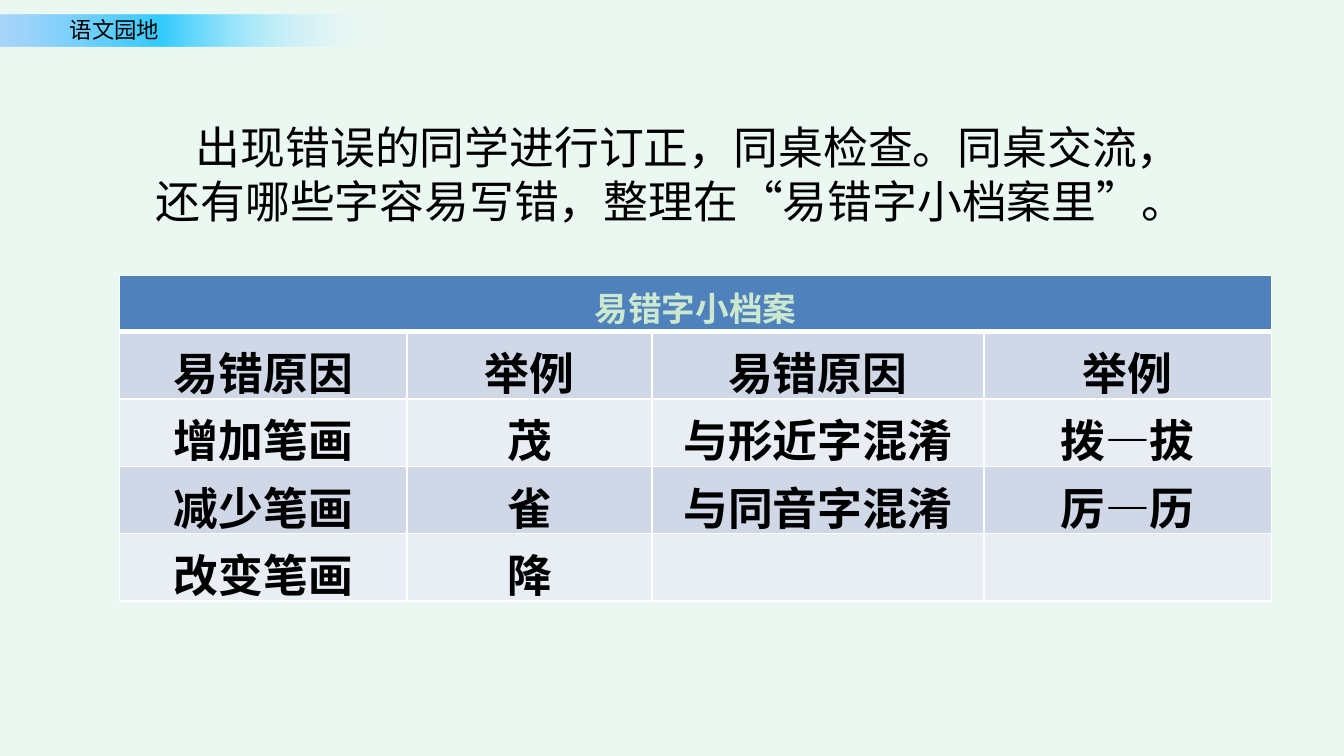
from lxml.etree import SubElement
from pptx import Presentation
from pptx.dml.color import RGBColor
from pptx.enum.shapes import MSO_SHAPE
from pptx.enum.text import PP_ALIGN
from pptx.oxml.ns import qn
from pptx.util import Inches, Pt

COLORS = {
    "page": "EBF7F1", "ink": "000000", "pale": "CCE8CF", "header": "4F81BD",
    "band_dark": "D0D8E8", "band_light": "E9EDF4", "border": "FFFFFF",
}
BAR_STOPS = [(0, "99CCFF", 76), (40, "33CCFF", 100), (97, "FFFFFF", 0)]
CJK = "Noto Sans CJK SC"

TABLE_TITLE = "易错字小档案"
ROWS = [
    ["易错原因", "举例", "易错原因", "举例"],
    ["增加笔画", "茂", "与形近字混淆", "拨—拔"],
    ["减少笔画", "雀", "与同音字混淆", "厉—历"],
    ["改变笔画", "降", "", ""],
]
COL_WIDTHS = [2.14, 1.82, 2.47, 2.14]
TITLE_HEIGHT, ROW_HEIGHT = 0.42, 0.5


def rgb(name):
    return RGBColor.from_string(COLORS[name])


def set_attrs(obj, values):
    for name, value in values.items():
        setattr(obj, name, value)


def write(p, text, size, color="ink", font=CJK, bold=False):
    r = p.add_run()
    r.text = text
    set_attrs(r.font, {"size": Pt(size), "bold": bold, "name": font})
    r.font.color.rgb = rgb(color)
    SubElement(r._r.get_or_add_rPr(), qn("a:ea"), typeface=CJK)


def add_text(slide, box, text, size, wrap=True, indent=0):
    tf = slide.shapes.add_textbox(*map(Inches, box)).text_frame
    tf.word_wrap = wrap
    p = tf.paragraphs[0]
    p._p.get_or_add_pPr().set("indent", str(Inches(indent)))
    write(p, text, size)


def add_section_bar(slide, left, top, width, height):
    """Fading gradient strip with the section name on it."""
    sp = slide.shapes.add_shape(
        MSO_SHAPE.RECTANGLE, *map(Inches, (left, top, width, height)))
    sp.shadow.inherit = False
    sp.line.fill.background()
    sp.fill.gradient()
    sp.fill.gradient_angle = 0
    stops = sp._element.spPr.find(f".//{qn('a:gsLst')}")
    for stop in list(stops):
        stops.remove(stop)
    for pos, color, alpha in BAR_STOPS:
        gs = SubElement(stops, qn("a:gs"), pos=str(pos * 1000))
        clr = SubElement(gs, qn("a:srgbClr"), val=color)
        SubElement(clr, qn("a:alpha"), val=str(alpha * 1000))
    add_text(slide, (left + 0.43, top - 0.04, 0.88, 0.3), "语文园地", 12, wrap=False)


def style_cell(cell, fill, top_width=1, bottom_width=1):
    tcPr = cell._tc.get_or_add_tcPr()
    for side, width in {"L": 1, "R": 1, "T": top_width, "B": bottom_width}.items():
        ln = SubElement(tcPr, qn(f"a:ln{side}"), w=str(Pt(width)))
        line_fill = SubElement(ln, qn("a:solidFill"))
        SubElement(line_fill, qn("a:srgbClr"), val=COLORS["border"])
    cell.fill.solid()
    cell.fill.fore_color.rgb = rgb(fill)


def fill_cell(cell, text, **fmt):
    p = cell.text_frame.paragraphs[0]
    p.alignment = PP_ALIGN.CENTER
    if text:
        write(p, text, bold=True, **fmt)


def add_error_table(slide, left, top):
    height = TITLE_HEIGHT + ROW_HEIGHT * len(ROWS)
    table = slide.shapes.add_table(
        len(ROWS) + 1, len(COL_WIDTHS),
        *map(Inches, (left, top, sum(COL_WIDTHS), height))).table
    set_attrs(table, {"first_row": False, "horz_banding": False})
    for column, width in zip(table.columns, COL_WIDTHS):
        column.width = Inches(width)
    for i, row in enumerate(table.rows):
        row.height = Inches(ROW_HEIGHT if i else TITLE_HEIGHT)

    for cell in table.rows[0].cells:
        style_cell(cell, "header", bottom_width=3)
    title = table.cell(0, 0)
    title.merge(table.cell(0, len(COL_WIDTHS) - 1))
    fill_cell(title, TABLE_TITLE, size=18, color="pale")

    for i, texts in enumerate(ROWS, start=1):
        for j, text in enumerate(texts):
            cell = table.cell(i, j)
            style_cell(cell, "band_dark" if i % 2 else "band_light",
                       top_width=3 if i == 1 else 1)
            fill_cell(cell, text, size=24, font="Arial")


def main():
    prs = Presentation()
    width = Inches(10)
    set_attrs(prs, {"slide_width": width, "slide_height": width * 9 // 16})
    slide = prs.slides.add_slide(prs.slide_layouts[6])
    slide.background.fill.solid()
    slide.background.fill.fore_color.rgb = rgb("page")

    add_section_bar(slide, -0.01, 0.11, 3.03, 0.24)
    add_error_table(slide, 0.89, 2.05)
    add_text(
        slide, (1.06, 0.84, 7.91, 0.91),
        "出现错误的同学进行订正，同桌检查。同桌交流，"
        "还有哪些字容易写错，整理在“易错字小档案里”。",
        24, indent=0.3)
    prs.save("out.pptx")


if __name__ == "__main__":
    main()
